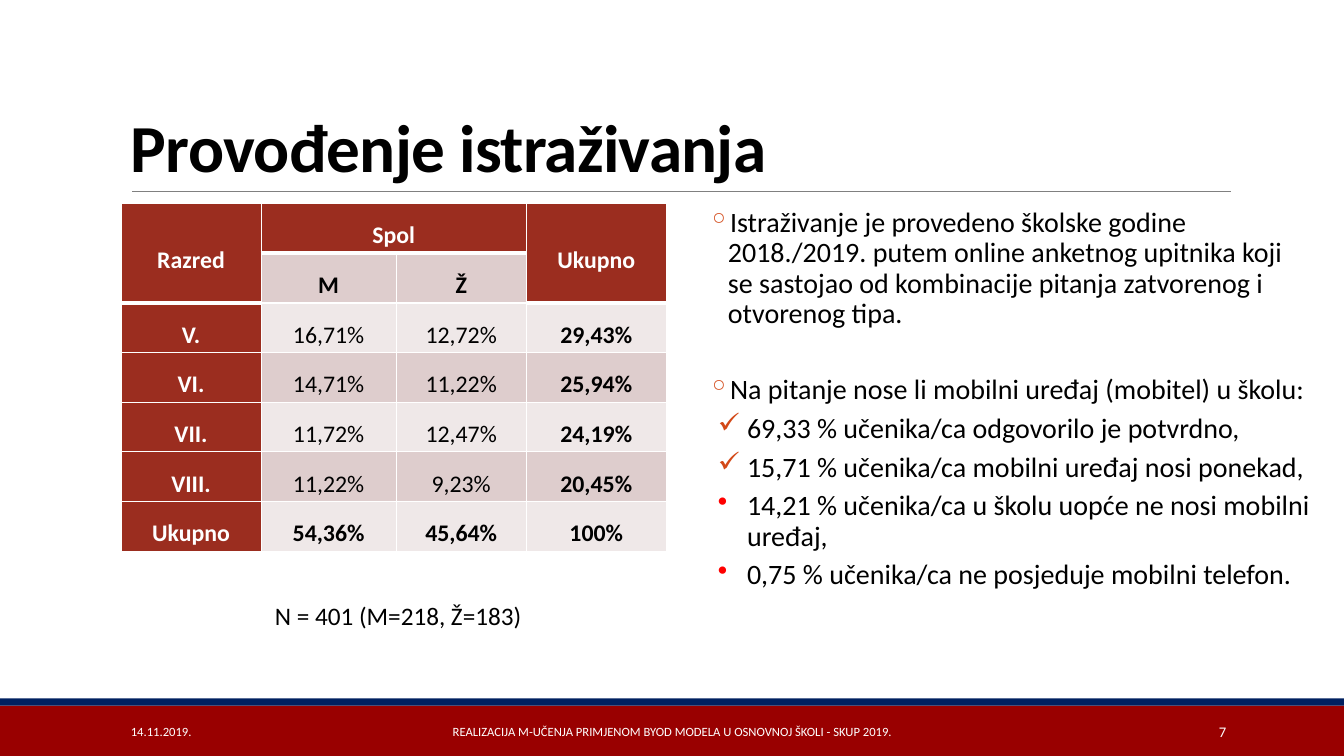
import pptx
import pptx.util
import pptx.dml.color
import pptx.enum.shapes
import pptx.enum.text
import pptx.oxml
import pptx.oxml.ns

Inches, Pt = pptx.util.Inches, pptx.util.Pt
ALIGN, ANCHOR = pptx.enum.text.PP_ALIGN, pptx.enum.text.MSO_ANCHOR
FONT = "Calibri"
COLORS = {"black": "000000", "white": "FFFFFF", "rule": "808080",
          "footer": "990000", "stripe": "002060", "header": "9B2D1F",
          "dark band": "DECDCD", "light band": "EFE8E8",
          "orange": "D34817", "red": "FF0000"}

# Content
TITLE = "Provođenje istraživanja"
TABLE = [
    ["Razred", "Spol", "", "Ukupno"],
    ["", "M", "Ž", ""],
    ["V.", "16,71%", "12,72%", "29,43%"],
    ["VI.", "14,71%", "11,22%", "25,94%"],
    ["VII.", "11,72%", "12,47%", "24,19%"],
    ["VIII.", "11,22%", "9,23%", "20,45%"],
    ["Ukupno", "54,36%", "45,64%", "100%"],
]
MERGES = [((0, 0), (1, 0)), ((0, 1), (0, 2)), ((0, 3), (1, 3))]
COLUMN_WIDTHS = [1.39, 1.34, 1.29, 1.39]
SAMPLE = "N = 401 (M=218, Ž=183)"
# bullet, bullet colour, left margin, hanging indent, space before, text
FINDINGS = [
    ("◦", "orange", 0.42, 0.2, 2, "Istraživanje je provedeno školske godine 2018./2019. putem "
     "online anketnog upitnika koji se sastojao od kombinacije pitanja zatvorenog i otvorenog tipa."),
    ("◦", "orange", 0.42, 0.2, 29, "Na pitanje nose li mobilni uređaj (mobitel) u školu:"),
    ("✓", "orange", 0.61, 0.29, 2, "69,33 % učenika/ca odgovorilo je potvrdno,"),
    ("✓", "orange", 0.61, 0.29, 2, "15,71 % učenika/ca mobilni uređaj nosi ponekad,"),
    ("•", "red", 0.61, 0.29, 2, "14,21 % učenika/ca u školu uopće ne nosi mobilni uređaj,"),
    ("•", "red", 0.61, 0.29, 2, "0,75 % učenika/ca ne posjeduje mobilni telefon."),
]
# left, width, alignment, size, text
FOOTER = [
    (1.2, 2.7, ALIGN.LEFT, 9, "14.11.2019."),
    (4.03, 5.27, ALIGN.CENTER, 9,
     "REALIZACIJA M-UČENJA PRIMJENOM BYOD MODELA U OSNOVNOJ ŠKOLI - SKUP 2019."),
    (10.83, 1.43, ALIGN.RIGHT, 10.5, "7"),
]


def rgb(name):
    return pptx.dml.color.RGBColor.from_string(COLORS[name])


def add_xml(parent, xml):
    namespaces = pptx.oxml.ns.nsdecls("a")
    parent.append(pptx.oxml.parse_xml(xml.replace(">", f" {namespaces}>", 1)
                                      if "/>" not in xml.split(">")[0] + ">"
                                      else xml.replace("/>", f" {namespaces}/>", 1)))


def add_run(paragraph, text, size, color="black", bold=False):
    run = paragraph.add_run()
    run.text = text
    run.font.name, run.font.size, run.font.bold = FONT, Pt(size), bold
    run.font.color.rgb = rgb(color)
    return run


def add_frame(slide, left, top, width, height, anchor=ANCHOR.TOP, side_inset=0.1):
    frame = slide.shapes.add_textbox(*map(Inches, (left, top, width, height))).text_frame
    frame.word_wrap = True
    frame.vertical_anchor = anchor
    frame.margin_left = frame.margin_right = Inches(side_inset)
    return frame


def add_bar(slide, top, height, color):
    bar = slide.shapes.add_shape(pptx.enum.shapes.MSO_SHAPE.RECTANGLE, 0, Inches(top),
                                 Inches(13.33), Inches(height))
    bar.shadow.inherit = False
    bar.fill.solid()
    bar.fill.fore_color.rgb = rgb(color)
    bar.line.fill.background()


def add_results(slide):
    results = slide.shapes.add_table(len(TABLE), len(COLUMN_WIDTHS), Inches(1.2), Inches(2.02),
                                     Inches(sum(COLUMN_WIDTHS)), Inches(3.45)).table
    for column, width in zip(results.columns, COLUMN_WIDTHS):
        column.width = Inches(width)
    for start, end in MERGES:
        results.cell(*start).merge(results.cell(*end))
    for r, row in enumerate(TABLE):
        for c, text in enumerate(row):
            cell = results.cell(r, c)
            heading = r == 0 or c == 0 or (r == 1 and c == 3)
            bold = heading or r in (1, len(TABLE) - 1) or c == 3
            cell.margin_left = cell.margin_right = Inches(0.09)
            cell.margin_top = cell.margin_bottom = 0
            cell.vertical_anchor = ANCHOR.MIDDLE
            # White borders, thick under the column headings
            for side in "LRTB":
                width = Pt(3 if side == "B" and heading and r < 2 else 1)
                add_xml(cell._tc.get_or_add_tcPr(),
                        f'<a:ln{side} w="{width}"><a:solidFill><a:srgbClr '
                        f'val="{COLORS["white"]}"/></a:solidFill></a:ln{side}>')
            cell.fill.solid()
            cell.fill.fore_color.rgb = rgb(
                "header" if heading else "dark band" if r % 2 else "light band")
            if text:
                paragraph = cell.text_frame.paragraphs[0]
                paragraph.alignment, paragraph.line_spacing = ALIGN.CENTER, 1.5
                add_run(paragraph, text, 17, "white" if heading else "black", bold)


def add_findings(slide):
    frame = add_frame(slide, 6.8, 2.02, 6.2, 4.7, side_inset=0)
    for i, (bullet, color, margin, hang, before, text) in enumerate(FINDINGS):
        paragraph = frame.add_paragraph() if i else frame.paragraphs[0]
        paragraph.line_spacing = 0.9
        paragraph.space_before, paragraph.space_after = Pt(before), Pt(4)
        properties = paragraph._p.get_or_add_pPr()
        properties.set("marL", str(Inches(margin)))
        properties.set("indent", str(-Inches(hang)))
        add_xml(properties, f'<a:buClr><a:srgbClr val="{COLORS[color]}"/></a:buClr>')
        add_xml(properties, f'<a:buChar char="{bullet}"/>')
        add_run(paragraph, text, 20)


def main():
    deck = pptx.Presentation()
    deck.slide_width, deck.slide_height = Inches(13.33), Inches(7.5)
    slide = deck.slides.add_slide(deck.slide_layouts[6])

    # Footer bars and title rule
    add_bar(slide, 7, 0.5, "footer")
    add_bar(slide, 6.93, 0.07, "stripe")
    rule = slide.shapes.add_connector(pptx.enum.shapes.MSO_CONNECTOR.STRAIGHT,
                                      Inches(1.31), Inches(1.9), Inches(12.21), Inches(1.9))
    rule.line.color.rgb, rule.line.width = rgb("rule"), Pt(0.5)
    add_xml(rule._element.spPr, "<a:effectLst/>")

    # Title
    title = add_frame(slide, 1.2, 0.31, 11, 1.59, ANCHOR.BOTTOM).paragraphs[0]
    title.line_spacing = 0.85
    heading = add_run(title, TITLE, 48, bold=True)
    heading.font._element.set("spc", "-50")

    # Table, sample size and findings
    add_results(slide)
    sample = add_frame(slide, 1.25, 5.86, 5.4, 0.62, side_inset=0).paragraphs[0]
    sample.alignment, sample.line_spacing = ALIGN.CENTER, 1.14
    add_run(sample, SAMPLE, 18)
    add_findings(slide)

    # Footer texts
    for left, width, alignment, size, text in FOOTER:
        note = add_frame(slide, left, 7.06, width, 0.4, ANCHOR.MIDDLE).paragraphs[0]
        note.alignment = alignment
        add_run(note, text, size, "white")

    deck.save("out.pptx")


if __name__ == "__main__":
    main()
